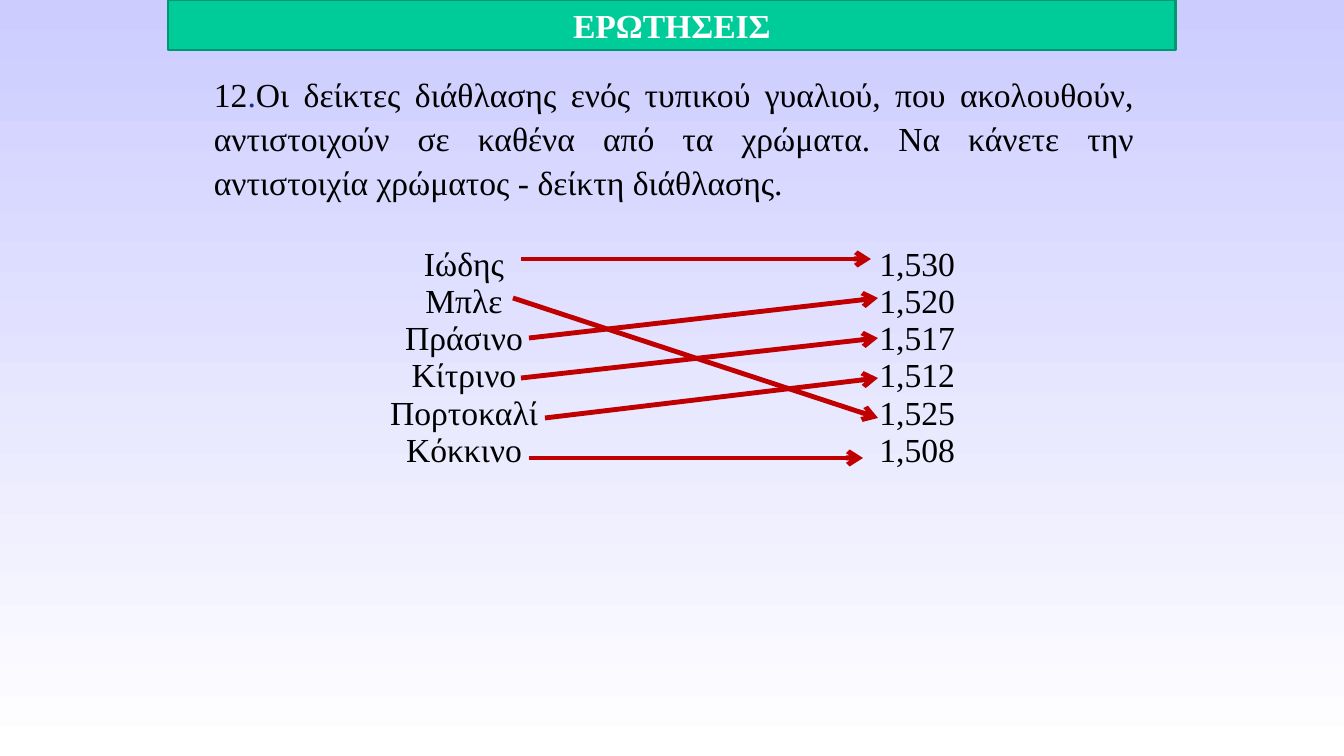
from lxml import etree
from pptx import Presentation
from pptx import util as u
from pptx.dml.color import RGBColor
from pptx.enum import shapes, text
from pptx.oxml.ns import qn

PX = 12192000 / 1344
NO_STYLE_NO_GRID = "{2D5ABB26-0587-4C30-8999-92F81FD0307C}"
QUESTION = (
    "Οι δείκτες διάθλασης ενός τυπικού γυαλιού, που ακολουθούν, "
    "αντιστοιχούν σε καθένα από τα χρώματα. Να κάνετε την "
    "αντιστοιχία χρώματος - δείκτη διάθλασης."
)
COLOURS = ["Ιώδης", "Μπλε", "Πράσινο", "Κίτρινο", "Πορτοκαλί", "Κόκκινο"]
INDICES = ["1,530", "1,520", "1,517", "1,512", "1,525", "1,508"]
# Start x, start row, end x, end row
MATCHES = [
    (521, 0, 871, 0),
    (513, 1, 878, 4),
    (529, 2, 878, 1),
    (521, 3, 878, 2),
    (545, 4, 878, 3),
    (529, 5, 863, 5),
]


def px(*lengths):
    return [u.Emu(round(n * PX)) for n in lengths]


def rgb(value):
    return RGBColor.from_string(value)


prs = Presentation()
prs.slide_width, prs.slide_height = px(1344, 756)
s = prs.slides.add_slide(prs.slide_layouts[6])

fill = s.background.fill
fill.gradient()
fill.gradient_angle = 270
for stop, colour in zip(fill.gradient_stops, ["CCCCFF", "FFFFFF"]):
    stop.color.rgb = rgb(colour)

# Question
question = s.shapes.add_textbox(*px(204, 70, 940, 132))
tf = question.text_frame
tf.word_wrap = True
tf.vertical_anchor = text.MSO_ANCHOR.MIDDLE
p = tf.paragraphs[0]
p.alignment = text.PP_ALIGN.JUSTIFY
p.line_spacing = 1.09
for part, colour in [("12", "000000"), (".", "0D3193"), (QUESTION, "000000")]:
    r = p.add_run()
    r.text = part
    r.font.color.rgb = rgb(colour)

# Colours and refractive indices
frame = s.shapes.add_table(1, 2, *px(299, 227, 660, 262))
table = frame.table
table.first_row = table.horz_banding = False
frame._element.find(".//" + qn("a:tableStyleId")).text = NO_STYLE_NO_GRID
columns = [(COLOURS, text.PP_ALIGN.CENTER), (INDICES, text.PP_ALIGN.RIGHT)]
for cell, (entries, alignment) in zip(table.rows[0].cells, columns):
    cell.fill.background()
    cell.vertical_anchor = text.MSO_ANCHOR.MIDDLE
    cell.margin_left = cell.margin_right = px(4)[0]
    cell.margin_top = cell.margin_bottom = px(4)[0]
    cell.text_frame.text = "\n".join(entries)
    for p in cell.text_frame.paragraphs:
        p.alignment = alignment
        p.runs[0].font.color.rgb = rgb("000000")

# Title bar
title = s.shapes.add_shape(shapes.MSO_SHAPE.RECTANGLE, *px(168, 0, 1008, 50))
title.shadow.inherit = False
title.fill.solid()
title.fill.fore_color.rgb = rgb("00CC99")
title.line.color.rgb = rgb("009771")
title.line.width = u.Pt(2)
title.text_frame.text = "ΕΡΩΤΗΣΕΙΣ"
title.text_frame.vertical_anchor = text.MSO_ANCHOR.MIDDLE
p = title.text_frame.paragraphs[0]
p.alignment = text.PP_ALIGN.CENTER
p.runs[0].font.bold = True
p.runs[0].font.color.rgb = rgb("FFFFFF")

# One typeface and size throughout
for tf in [question.text_frame, title.text_frame,
           *(cell.text_frame for cell in table.iter_cells())]:
    for p in tf.paragraphs:
        for r in p.runs:
            r.font.name = "Times New Roman"
            r.font.size = u.Pt(24)

# Matching arrows, on six evenly spaced rows
row_y = [259 + 199 * i // 5 for i in range(6)]
for x1, start, x2, end in MATCHES:
    arrow = s.shapes.add_connector(
        shapes.MSO_CONNECTOR.STRAIGHT, *px(x1, row_y[start], x2, row_y[end]))
    arrow.line.color.rgb = rgb("C00000")
    arrow.line.width = u.Pt(3.5)
    etree.SubElement(arrow.line._get_or_add_ln(), qn("a:tailEnd"), type="arrow")
    etree.SubElement(arrow._element.spPr, qn("a:effectLst"))

prs.save("out.pptx")
